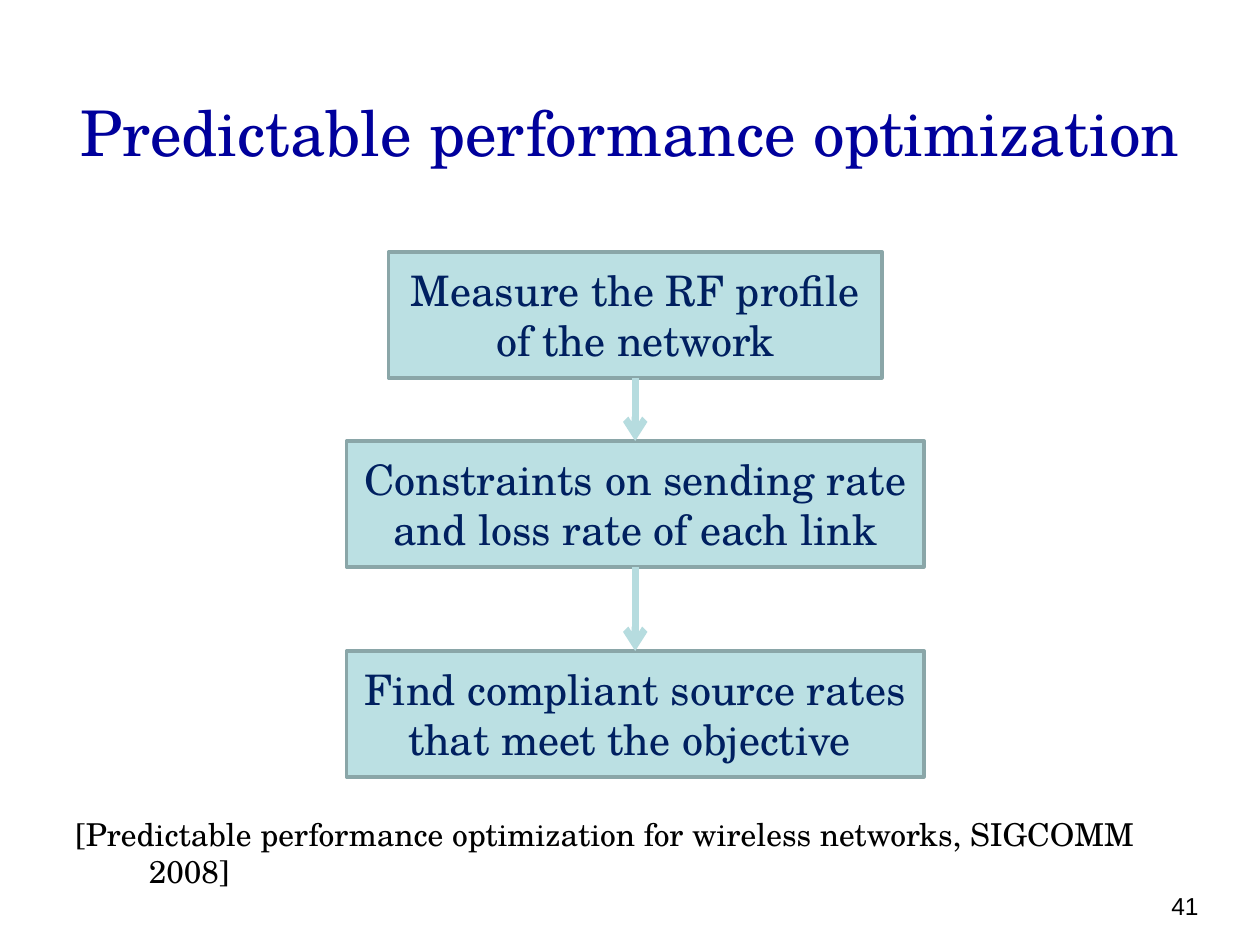
import pptx
import pptx.util
import pptx.dml.color
import pptx.enum.shapes
import pptx.enum.text
import pptx.oxml
import pptx.oxml.ns

Pt = pptx.util.Pt
ALIGN = pptx.enum.text.PP_ALIGN
ANCHOR = pptx.enum.text.MSO_ANCHOR
SERIF = "TeX Gyre Schola"

TITLE = "Predictable performance optimization"
CITATION = "[Predictable performance optimization for wireless networks, SIGCOMM 2008]"
PAGE = "41"
STEPS = [
    ("Measure the RF profile of the network", 144, 282),
    ("Constraints on sending rate and loss rate of each link", 252, 330),
    ("Find compliant source rates that meet the objective ", 372, 330),
]
CENTER, STEP_HEIGHT = 363, 72


def rgb(value):
    return pptx.dml.color.RGBColor.from_string(value)


def write(sp, text, size, color, align, anchor, font=SERIF):
    tf = sp.text_frame
    tf.word_wrap = True
    tf.vertical_anchor = anchor
    p = tf.paragraphs[0]
    p.alignment = align
    r = p.add_run()
    r.text = text
    r.font.name = font
    r.font.size = Pt(size)
    r.font.color.rgb = rgb(color)
    return p


def add_text(s, box, *style):
    sp = s.shapes.add_textbox(*map(Pt, box))
    return write(sp, *style)


def add_step(s, text, top, width):
    sp = s.shapes.add_shape(
        pptx.enum.shapes.MSO_SHAPE.RECTANGLE,
        Pt(CENTER - width / 2), Pt(top), Pt(width), Pt(STEP_HEIGHT))
    sp.shadow.inherit = False
    sp.fill.solid()
    sp.fill.fore_color.rgb = rgb("BBE0E3")
    sp.line.color.rgb = rgb("8AA6A8")
    sp.line.width = Pt(2)
    write(sp, text, 24, "002060", ALIGN.CENTER, ANCHOR.MIDDLE)
    return sp


def add_arrow(s, upper, lower):
    cx = s.shapes.add_connector(
        pptx.enum.shapes.MSO_CONNECTOR.STRAIGHT, 0, 0, 0, 0)
    cx.begin_connect(upper, 2)
    cx.end_connect(lower, 0)
    cx.line.color.rgb = rgb("B6DCDF")
    cx.line.width = Pt(4)
    tail = pptx.oxml.parse_xml(
        '<a:tailEnd %s type="arrow"/>' % pptx.oxml.ns.nsdecls("a"))
    cx.line._get_or_add_ln().append(tail)
    cx._element.spPr.append(pptx.oxml.parse_xml(
        "<a:effectLst %s/>" % pptx.oxml.ns.nsdecls("a")))


def main():
    prs = pptx.Presentation()
    prs.slide_width, prs.slide_height = Pt(720), Pt(540)
    s = prs.slides.add_slide(prs.slide_layouts[6])

    add_text(s, (36, 30, 648, 90), TITLE, 36, "00009C", ALIGN.CENTER, ANCHOR.MIDDLE)
    add_text(s, (524, 492, 168, 37.5), PAGE, 14, "000000", ALIGN.RIGHT, ANCHOR.BOTTOM, "Arial")

    steps = [add_step(s, *step) for step in STEPS]
    for upper, lower in zip(steps, steps[1:]):
        add_arrow(s, upper, lower)

    p = add_text(s, (36, 462, 666, 36), CITATION, 18, "000000", ALIGN.LEFT, ANCHOR.TOP)
    p.space_before = Pt(3.6)
    pPr = p._p.get_or_add_pPr()
    pPr.set("marL", str(Pt(42)))
    pPr.set("indent", str(Pt(-42)))

    prs.save("out.pptx")


if __name__ == "__main__":
    main()
